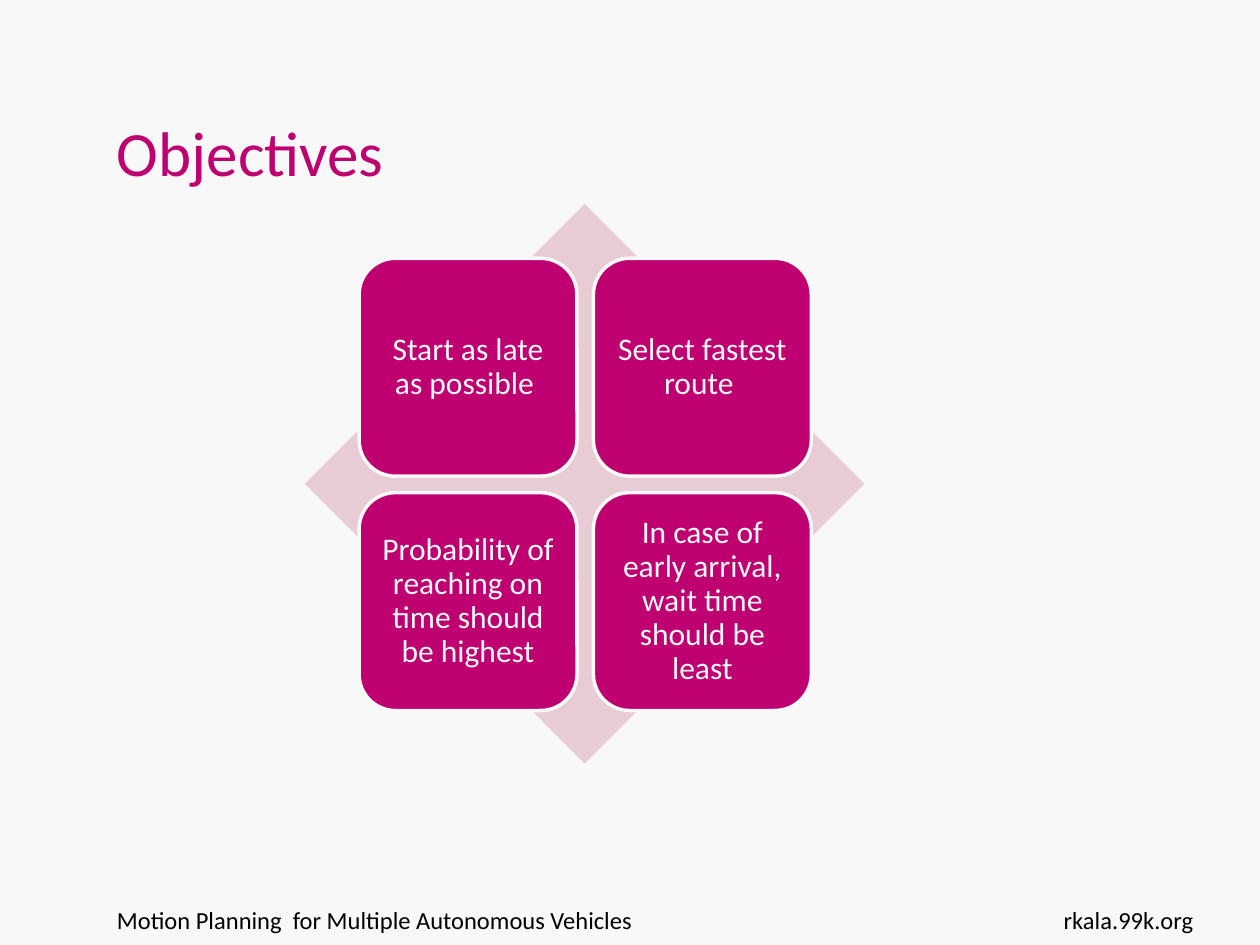
import pptx
import pptx.dml.color
import pptx.enum.shapes
import pptx.enum.text
import pptx.util

Inches = pptx.util.Inches
Shape = pptx.enum.shapes.MSO_SHAPE
Anchor = pptx.enum.text.MSO_ANCHOR
Align = pptx.enum.text.PP_ALIGN


def color(value):
    return pptx.dml.color.RGBColor.from_string(value)


class SlideBuilder:
    FONT = "Calibri"
    BACKGROUND = "F8F8F8"
    ACCENT = "BF0071"
    PALE = "E8CCD5"
    BLACK = "000000"

    def __init__(self, deck):
        self.slide = deck.slides.add_slide(deck.slide_layouts[6])
        fill = self.slide.background.fill
        fill.solid()
        fill.fore_color.rgb = color(self.BACKGROUND)

    def set_words(self, shape, words, size, ink, frame_format, para_format):
        frame = shape.text_frame
        for name, value in {"word_wrap": True, **frame_format}.items():
            setattr(frame, name, value)
        para = frame.paragraphs[0]
        for name, value in para_format.items():
            setattr(para, name, value)
        span = para.add_run()
        span.text = words
        for name, value in {"name": self.FONT, "size": pptx.util.Pt(size)}.items():
            setattr(span.font, name, value)
        span.font.color.rgb = color(ink)

    def text(self, area, words, size, ink, anchor=Anchor.TOP, align=Align.LEFT):
        box = self.slide.shapes.add_textbox(*map(Inches, area))
        self.set_words(box, words, size, ink,
                       {"vertical_anchor": anchor}, {"alignment": align})

    def shape(self, kind, area, fill, line=None):
        shape = self.slide.shapes.add_shape(kind, *map(Inches, area))
        shape.shadow.inherit = False
        shape.fill.solid()
        shape.fill.fore_color.rgb = color(fill)
        if line:
            shape.line.color.rgb = color(line)
            shape.line.width = pptx.util.Pt(2)
        else:
            shape.line.fill.background()
        return shape

    def tile(self, area, words):
        tile = self.shape(Shape.ROUNDED_RECTANGLE, area, self.ACCENT, self.BACKGROUND)
        sides = ("left", "top", "right", "bottom")
        frame_format = {f"margin_{side}": Inches(0.07) for side in sides}
        frame_format["vertical_anchor"] = Anchor.MIDDLE
        self.set_words(tile, words, 18, self.BACKGROUND, frame_format,
                       {"alignment": Align.CENTER, "line_spacing": 0.9})


def main():
    deck = pptx.Presentation()
    deck.slide_width, deck.slide_height = Inches(10), Inches(7.5)
    page = SlideBuilder(deck)

    # Footer and title
    page.text((0.83, 7.13, 6.93, 0.52),
              "Motion Planning  for Multiple Autonomous Vehicles", 14, page.BLACK)
    page.text((0.83, 0.3, 6.77, 1.25), "Objectives", 36, page.ACCENT, Anchor.BOTTOM)
    page.text((8.07, 7.13, 1.5, 0.52), "rkala.99k.org", 14, page.BLACK,
              align=Align.RIGHT)

    # Diamond behind a two-by-two grid of objectives
    page.shape(Shape.DIAMOND, (2.42, 1.62, 4.44, 4.44), page.PALE)
    objectives = [
        "Start as late as possible ",
        "Select fastest route ",
        "Probability of reaching on time should be highest",
        "In case of early arrival, wait time should be least",
    ]
    left, top, size, step = 2.85, 2.05, 1.73, 1.86
    for index, words in enumerate(objectives):
        row, column = divmod(index, 2)
        page.tile((left + column * step, top + row * step, size, size), words)

    deck.save("out.pptx")


if __name__ == "__main__":
    main()
